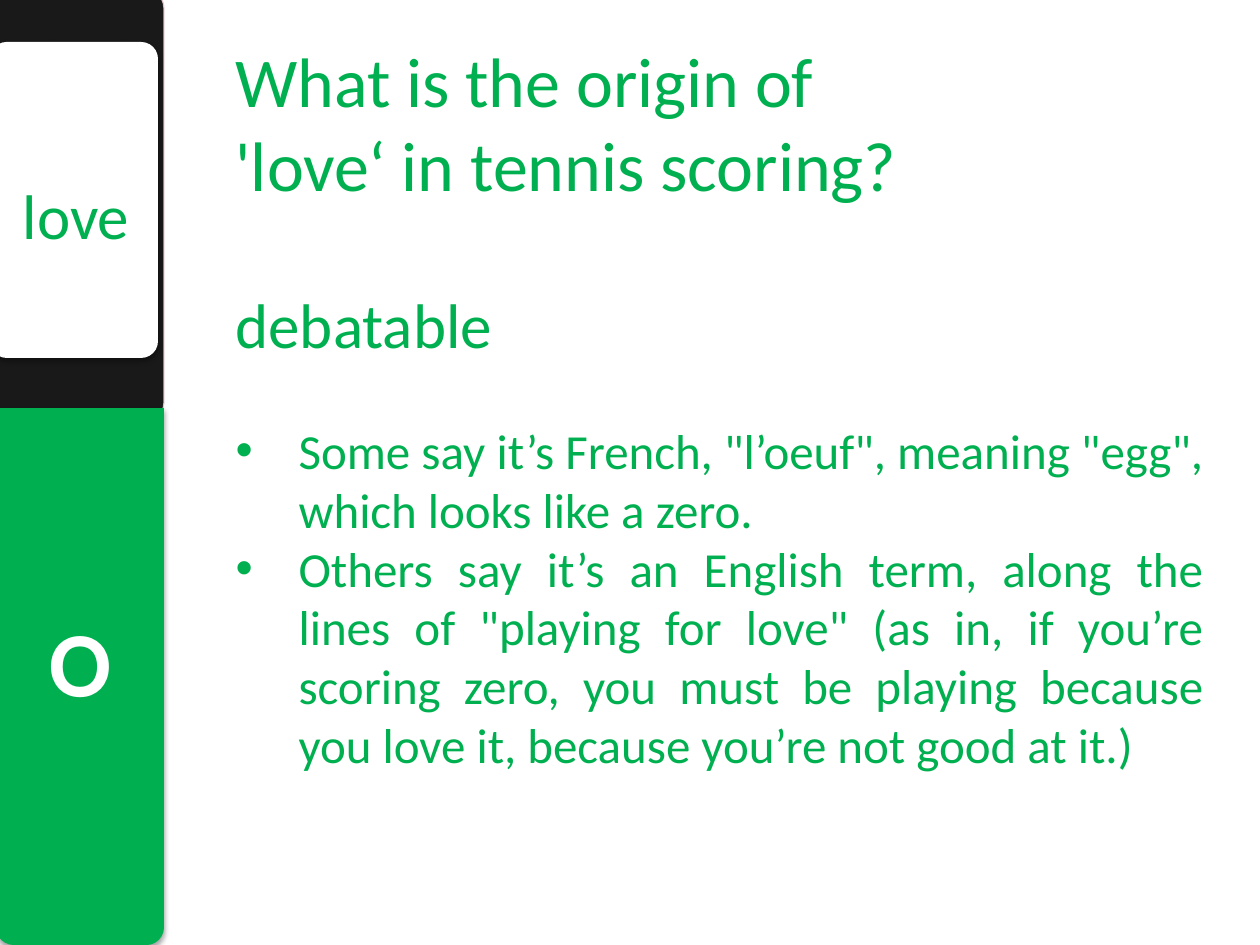
from dataclasses import dataclass

import lxml.etree
import pptx
import pptx.dml.color
import pptx.enum.shapes
import pptx.enum.text
import pptx.oxml.ns
import pptx.util

RGBColor = pptx.dml.color.RGBColor
Shape = pptx.enum.shapes.MSO_SHAPE
Align = pptx.enum.text.PP_ALIGN
Anchor = pptx.enum.text.MSO_ANCHOR
qn = pptx.oxml.ns.qn

GREEN = RGBColor(0x00, 0xB0, 0x50)
WHITE = RGBColor(0xFF, 0xFF, 0xFF)
BLACK = RGBColor(0x00, 0x00, 0x00)
PALE_PINK = RGBColor(0xE8, 0xD0, 0xD0)
EMU_PER_PX = 914400 / 126
BULLET_INDENT = 63


def px(length: int) -> int:
    return round(length * EMU_PER_PX)


@dataclass
class Panel:
    kind: int
    bounds: tuple[int, int, int, int]
    color: RGBColor
    corners: tuple[float, ...] = ()
    rotation: int = 0
    shadow: bool = False


def place(box, bounds: tuple[int, int, int, int]) -> None:
    box.left, box.top, box.width, box.height = map(px, bounds)


def add_alpha(fill_parent, percent: int) -> None:
    color = fill_parent.find(qn("a:solidFill"))[0]
    lxml.etree.SubElement(color, qn("a:alpha"), val=str(percent * 1000))


def add_panel(page, panel: Panel):
    shape = page.shapes.add_shape(panel.kind, *map(px, panel.bounds))
    shape.fill.solid()
    shape.fill.fore_color.rgb = panel.color
    shape.line.fill.background()
    shape.rotation = panel.rotation
    for index, value in enumerate(panel.corners):
        shape.adjustments[index] = value
    shape.shadow.inherit = False
    if panel.shadow:
        effects = shape._element.spPr.find(qn("a:effectLst"))
        outer = lxml.etree.SubElement(
            effects, qn("a:outerShdw"), blurRad=str(pptx.util.Pt(3.1)),
            dist=str(pptx.util.Pt(1.8)), dir="5400000", rotWithShape="0")
        color = lxml.etree.SubElement(outer, qn("a:srgbClr"), val=str(BLACK))
        lxml.etree.SubElement(color, qn("a:alpha"), val="35000")
    return shape


def format_para(para, size: int, align: int, color: RGBColor = GREEN,
                font: str = "Calibri", bold: bool = False) -> None:
    para.alignment = align
    para.space_before = pptx.util.Pt(0)
    for span in para.runs:
        span.font.name = font
        span.font.size = pptx.util.Pt(size)
        span.font.bold = bold
        span.font.color.rgb = color


def set_bullet(para, char: str = "") -> None:
    indent = px(BULLET_INDENT) if char else 0
    properties = para._p.get_or_add_pPr()
    properties.set("marL", str(indent))
    properties.set("indent", str(-indent))
    if char:
        lxml.etree.SubElement(properties, qn("a:buFont"), typeface="Arial")
        lxml.etree.SubElement(properties, qn("a:buChar"), char=char)
    else:
        lxml.etree.SubElement(properties, qn("a:buNone"))


def prepare_frame(box, anchor: int):
    frame = box.text_frame
    frame.word_wrap = True
    frame.auto_size = pptx.enum.text.MSO_AUTO_SIZE.NONE
    frame.vertical_anchor = anchor
    return frame


def add_sidebar(page) -> None:
    # Dark panel with a thin translucent outline
    dark = add_panel(page, Panel(Shape.ROUNDED_RECTANGLE, (-15, -10, 179, 431), BLACK, (0.1,)))
    dark.line.color.rgb = PALE_PINK
    dark.line.width = pptx.util.Pt(0.75)
    add_alpha(dark._element.spPr, 90)
    add_alpha(dark._element.spPr.find(qn("a:ln")), 90)

    # White card and green panel
    add_panel(page, Panel(Shape.ROUNDED_RECTANGLE, (-10, 42, 168, 316), WHITE, (0.1,), shadow=True))
    add_panel(page, Panel(Shape.ROUND_2_SAME_RECTANGLE, (-4, 408, 168, 537), GREEN,
                          (0.105, 0), rotation=180, shadow=True))

    # Stacked letter on the green panel
    letter = page.shapes.add_textbox(*map(px, (1, 408, 158, 532)))
    frame = prepare_frame(letter, Anchor.MIDDLE)
    frame.margin_left = frame.margin_right = px(10)
    frame.margin_top, frame.margin_bottom = px(38), px(47)
    frame._txBody.bodyPr.set("vert", "wordArtVert")
    frame.text = "O"
    format_para(frame.paragraphs[0], 48, Align.CENTER, WHITE, "Cabin", True)
    frame.paragraphs[0].line_spacing = 0.9

    # Word on the white card
    word = add_panel(page, Panel(Shape.RECTANGLE, (-1, 170, 154, 89), WHITE))
    frame = prepare_frame(word, Anchor.TOP)
    frame.text = "love"
    format_para(frame.paragraphs[0], 36, Align.CENTER)


def add_content(page) -> None:
    # Question
    title = page.shapes.title
    place(title, (223, 31, 993, 186))
    frame = prepare_frame(title, Anchor.TOP)
    frame.text = "What is the origin of\n'love‘ in tennis scoring?"
    for para in frame.paragraphs:
        format_para(para, 40, Align.LEFT)

    # Answer and explanations
    body = page.placeholders[1]
    place(body, (223, 279, 993, 660))
    frame = prepare_frame(body, Anchor.TOP)
    frame.text = "\n".join((
        "debatable",
        'Some say it’s French, "l’oeuf", meaning "egg", which looks like a zero.',
        'Others say it’s an English term, along the lines of "playing for love" '
        "(as in, if you’re scoring zero, you must be playing because you love it, "
        "because you’re not good at it.)",
    ))
    answer, *explanations = frame.paragraphs
    format_para(answer, 36, Align.JUSTIFY)
    answer.space_after = pptx.util.Pt(34)
    set_bullet(answer)
    for para in explanations:
        format_para(para, 28, Align.JUSTIFY)
        set_bullet(para, "•")


def main() -> None:
    deck = pptx.Presentation()
    deck.slide_width, deck.slide_height = px(1260), px(945)
    page = deck.slides.add_slide(deck.slide_layouts[1])
    add_sidebar(page)
    add_content(page)
    deck.save("out.pptx")


if __name__ == "__main__":
    main()
